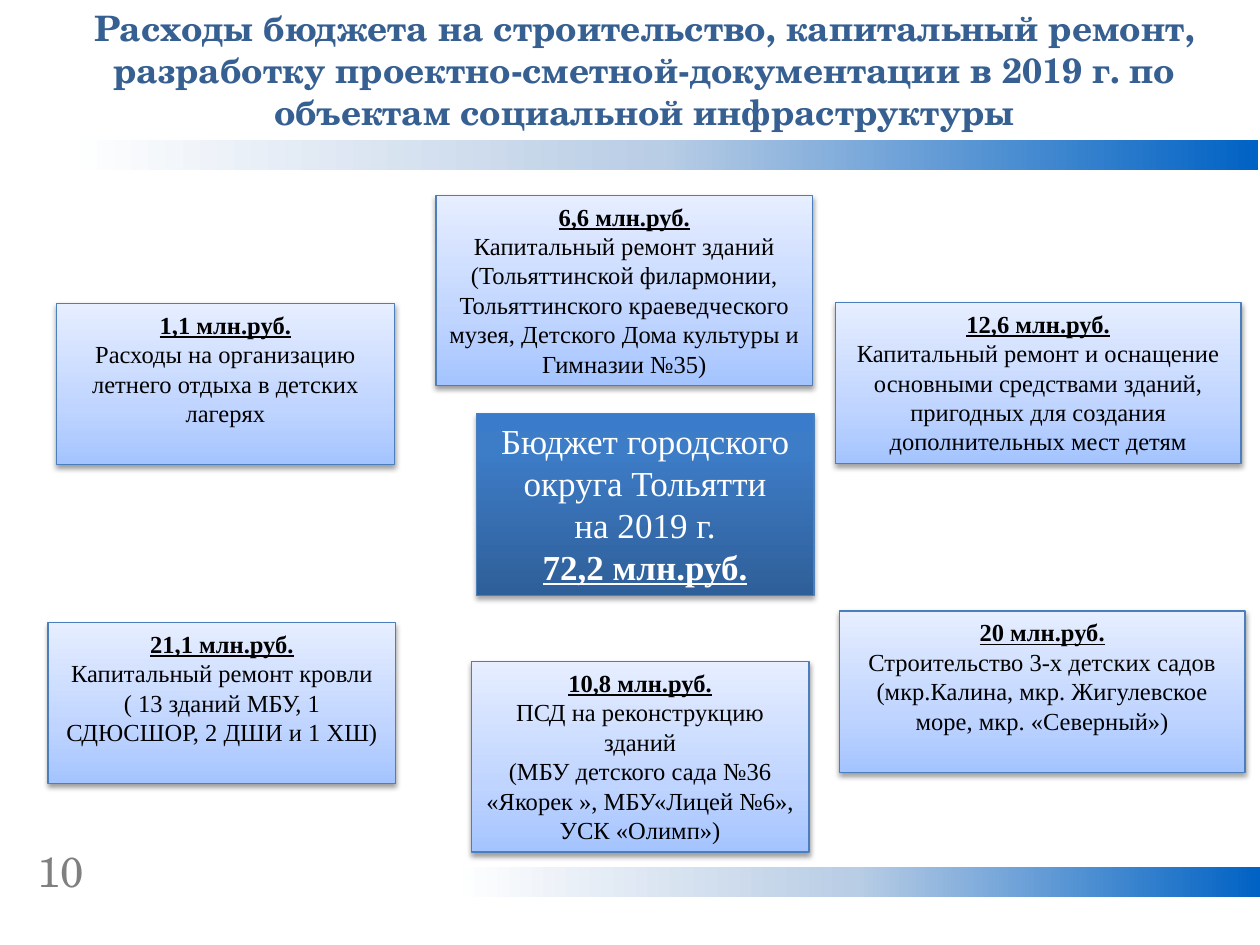
from lxml import etree
from pptx import Presentation
from pptx import util as u
from pptx.dml.color import RGBColor
from pptx.enum import shapes, text
from pptx.oxml.ns import qn

COLORS = {"title": "376092", "number": "808080", "card": "000000",
          "center": "FFFFFF", "line": "4B7EBC", "shadow": "000000"}
GRADIENTS = {  # (position in percent, colour)
    "bar": [(0, "0062C4"), (50, "B9CDE5"), (100, "FFFFFF")],
    "card": [(0, "A4C4FF"), (35, "BFD4FF"), (100, "E6EEFF")],
    "center": [(0, "2F5F99"), (80, "3D7CC7"), (100, "3A7CCB")],
}
HEADING_FONT, BODY_FONT = "TeX Gyre Schola", "Times New Roman"

TITLE = ("Расходы бюджета на строительство, капитальный ремонт, разработку "
         "проектно-сметной-документации в 2019 г. по объектам социальной инфраструктуры")
PAGE_NUMBER = "10"

# Positions in cm: left, top, width, height
BARS = [(1.27, 2.82, 24.1, 0.61), (9.09, 17.48, 16.31, 0.61)]
CARDS = [
    ((0.97, 12.55, 7.01, 3.25), "21,1 млн.руб.",
     ["Капитальный ремонт кровли", "( 13 зданий МБУ, 1\vСДЮСШОР, 2 ДШИ и 1 ХШ)"]),
    ((8.79, 3.94, 7.59, 3.84), "6,6 млн.руб.",
     ["Капитальный ремонт зданий",
      "(Тольяттинской филармонии, Тольяттинского краеведческого музея, "
      "Детского Дома культуры и Гимназии №35)"]),
    ((16.92, 12.32, 8.18, 3.25), "20 млн.руб.",
     ["Строительство 3-х детских садов (мкр.Калина, мкр. Жигулевское море, "
      "мкр. «Северный»)"]),
    ((9.5, 13.34, 6.81, 3.84), "10,8 млн.руб.",
     ["ПСД на реконструкцию зданий",
      "(МБУ детского сада №36 «Якорек », МБУ«Лицей №6», УСК «Олимп»)"]),
    ((1.14, 6.12, 6.81, 3.25), "1,1 млн.руб.",
     ["Расходы на организацию летнего отдыха в детских лагерях"]),
    ((16.84, 6.1, 8.18, 3.25), "12,6 млн.руб.",
     ["Капитальный ремонт и оснащение основными средствами зданий, "
      "пригодных для создания дополнительных мест детям"]),
]
CENTER_PLACE = (9.6, 8.33, 6.81, 3.68)
CENTER_LINES = ["Бюджет городского округа Тольятти", "на 2019 г."]
CENTER_SUM = "72,2 млн.руб."


def place(place_cm):
    return [u.Cm(value) for value in place_cm]


def add_child(parent, tag, **attributes):
    return etree.SubElement(parent, qn(tag), attributes)


def add_panel(page, place_cm, gradient, angle):
    """Rectangle with a gradient of several stops and no outline."""
    box = page.shapes.add_shape(shapes.MSO_SHAPE.RECTANGLE, *place(place_cm))
    box.shadow.inherit = False
    box.line.fill.background()
    box.fill.gradient()
    box.fill.gradient_angle = angle
    stops = box._element.spPr.find(".//" + qn("a:gsLst"))
    for stop in list(stops):
        stops.remove(stop)
    for percent, color in GRADIENTS[gradient]:
        stop = add_child(stops, "a:gs", pos=str(percent * 1000))
        add_child(stop, "a:srgbClr", val=color)
    return box


def add_shadow(box, opacity):
    effects = box._element.spPr.find(qn("a:effectLst"))
    shadow = add_child(effects, "a:outerShdw", blurRad=str(u.Pt(3.1)),
                       dist=str(u.Pt(1.7)), dir="5400000", rotWithShape="0")
    color = add_child(shadow, "a:srgbClr", val=COLORS["shadow"])
    add_child(color, "a:alpha", val=str(opacity * 1000))


def write(box, lines, font, size, color, align, strong=None, underline=False):
    """One paragraph per line; the line numbered strong is bold."""
    frame = box.text_frame
    frame.word_wrap = True
    frame.auto_size = text.MSO_AUTO_SIZE.NONE
    frame.vertical_anchor = text.MSO_ANCHOR.TOP
    for index, line in enumerate(lines):
        para = frame.paragraphs[0] if index == 0 else frame.add_paragraph()
        para.text = line
        para.alignment = align
        para.font.name, para.font.size = font, u.Pt(size)
        para.font.color.rgb = RGBColor.from_string(COLORS[color])
        para.font.bold = index == strong
        para.font.underline = underline and index == strong


def add_card(page, place_cm, kind, lines, size, strong, opacity):
    box = add_panel(page, place_cm, kind, 90)
    box.line.color.rgb = RGBColor.from_string(COLORS["line"])
    box.line.width = u.Pt(0.75)
    add_shadow(box, opacity)
    write(box, lines, BODY_FONT, size, kind, text.PP_ALIGN.CENTER, strong, True)


def main():
    deck = Presentation()
    deck.slide_width, deck.slide_height = u.Cm(25.4), u.Cm(19.05)
    page = deck.slides.add_slide(deck.slide_layouts[5])

    # Title
    title = page.shapes.title
    title.left, title.top, title.width, title.height = place((0.89, 0, 24.21, 2.82))
    write(title, [TITLE], HEADING_FONT, 20, "title", text.PP_ALIGN.CENTER, strong=0)

    # Decorative bars
    for bar in BARS:
        add_panel(page, bar, "bar", 180)

    # Page number
    number = page.shapes.add_textbox(*place((0.51, 16.92, 1.98, 1.27)))
    write(number, [PAGE_NUMBER], HEADING_FONT, 24, "number", text.PP_ALIGN.LEFT)

    # Spending cards around the total
    for place_cm, amount, lines in CARDS:
        add_card(page, place_cm, "card", [amount, *lines], 14, 0, 38)
    add_card(page, CENTER_PLACE, "center", [*CENTER_LINES, CENTER_SUM], 20,
             len(CENTER_LINES), 35)

    deck.save("out.pptx")


if __name__ == "__main__":
    main()
